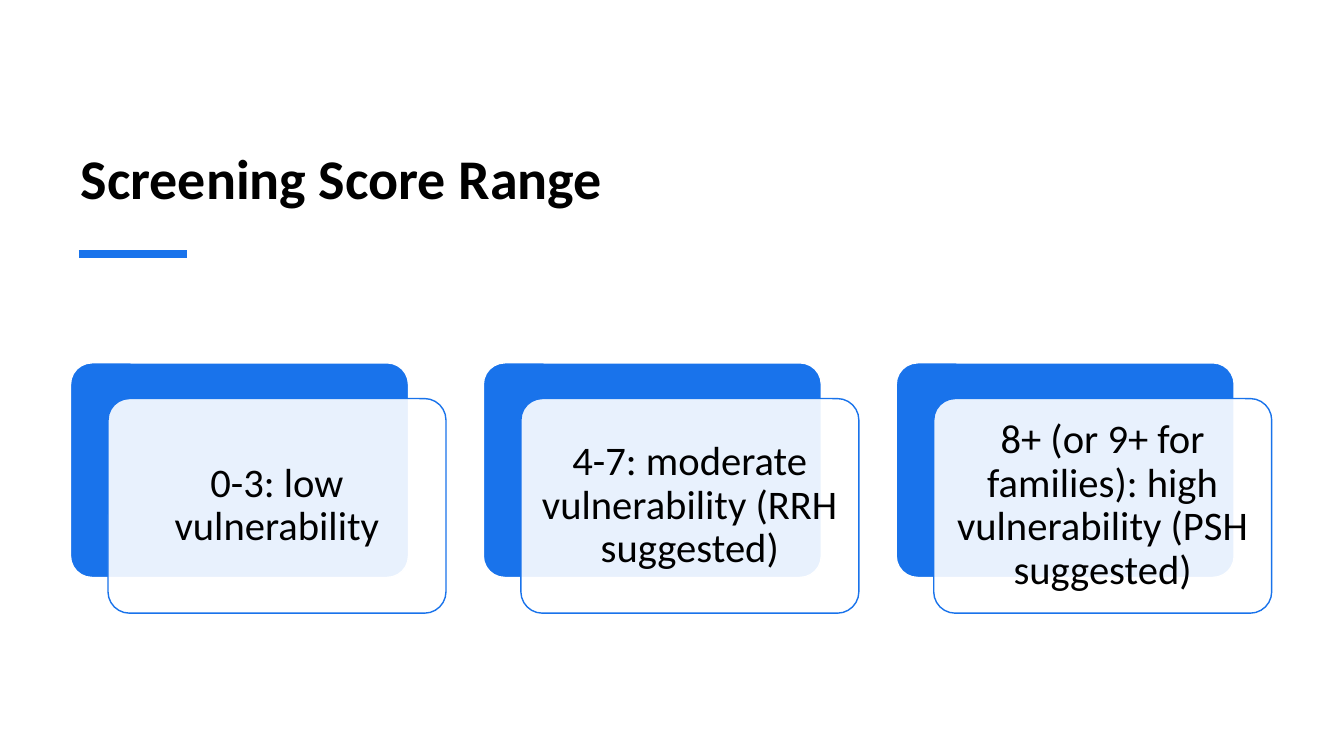
from dataclasses import dataclass

from lxml import etree
from pptx import Presentation
from pptx.dml.color import RGBColor
from pptx.enum import shapes, text
from pptx.oxml import ns
from pptx.util import Pt


@dataclass(frozen=True)
class Theme:
    font: str = "Calibri"
    accent: RGBColor = RGBColor(0x19, 0x73, 0xEB)
    ink: RGBColor = RGBColor(0, 0, 0)
    paper: RGBColor = RGBColor(255, 255, 255)
    title_size: int = 40
    card_size: int = 29
    panel_opacity: int = 90


@dataclass(frozen=True)
class ScoreCard:
    label: str
    left: float


THEME = Theme()
CARD_TOP, CARD_W, CARD_H = 259.2, 241.4, 153.3
CARD_PITCH = 294.9
SHIFT_X, SHIFT_Y = 26.8, 25.5
LABELS = [
    "0-3: low vulnerability",
    "4-7: moderate vulnerability (RRH suggested)",
    "8+ (or 9+ for families): high vulnerability (PSH suggested)",
]
CARDS = [ScoreCard(label, 50.4 + i * CARD_PITCH) for i, label in enumerate(LABELS)]


def add_text(tf, content: str, size: int, align, bold: bool = False) -> None:
    p = tf.paragraphs[0]
    p.alignment = align
    p.line_spacing = 0.9
    r = p.add_run()
    r.text = content
    r.font.name = THEME.font
    r.font.size = Pt(size)
    r.font.bold = bold
    r.font.color.rgb = THEME.ink


def add_box(s, left: float, top: float, fill: RGBColor, line: RGBColor):
    sp = s.shapes.add_shape(
        shapes.MSO_SHAPE.ROUNDED_RECTANGLE, Pt(left), Pt(top), Pt(CARD_W), Pt(CARD_H)
    )
    sp.adjustments[0] = 0.1
    sp.shadow.inherit = False
    sp.fill.solid()
    sp.fill.fore_color.rgb = fill
    sp.line.color.rgb = line
    sp.line.width = Pt(1)
    return sp


def add_card(s, card: ScoreCard) -> None:
    add_box(s, card.left, CARD_TOP, THEME.accent, THEME.paper)
    sp = add_box(s, card.left + SHIFT_X, CARD_TOP + SHIFT_Y, THEME.paper, THEME.accent)
    color = sp._element.spPr.find(ns.qn("a:solidFill")).find(ns.qn("a:srgbClr"))
    etree.SubElement(color, ns.qn("a:alpha")).set("val", str(THEME.panel_opacity * 1000))
    tf = sp.text_frame
    tf.word_wrap = True
    tf.vertical_anchor = text.MSO_ANCHOR.MIDDLE
    tf.margin_left = tf.margin_right = tf.margin_top = tf.margin_bottom = Pt(8.6)
    add_text(tf, card.label, THEME.card_size, text.PP_ALIGN.CENTER)


def add_title(s, content: str) -> None:
    sp = s.shapes.title
    sp.left, sp.top, sp.width, sp.height = Pt(50.4), Pt(45), Pt(857.5), Pt(109.6)
    tf = sp.text_frame
    tf.word_wrap = True
    tf.auto_size = text.MSO_AUTO_SIZE.NONE
    tf.vertical_anchor = text.MSO_ANCHOR.BOTTOM
    add_text(tf, content, THEME.title_size, text.PP_ALIGN.LEFT, bold=True)


def add_rule(s) -> None:
    line = s.shapes.add_connector(
        shapes.MSO_CONNECTOR.STRAIGHT, Pt(56.4), Pt(181.6), Pt(133.4), Pt(181.6)
    )
    line.line.color.rgb = THEME.accent
    line.line.width = Pt(6)
    etree.SubElement(line._element.spPr, ns.qn("a:effectLst"))


def main() -> None:
    prs = Presentation()
    prs.slide_width, prs.slide_height = Pt(960), Pt(540)
    s = prs.slides.add_slide(prs.slide_layouts.get_by_name("Title Only"))
    s.background.fill.solid()
    s.background.fill.fore_color.rgb = THEME.paper
    add_title(s, "Screening Score Range")
    add_rule(s)
    for card in CARDS:
        add_card(s, card)
    prs.save("out.pptx")


if __name__ == "__main__":
    main()
